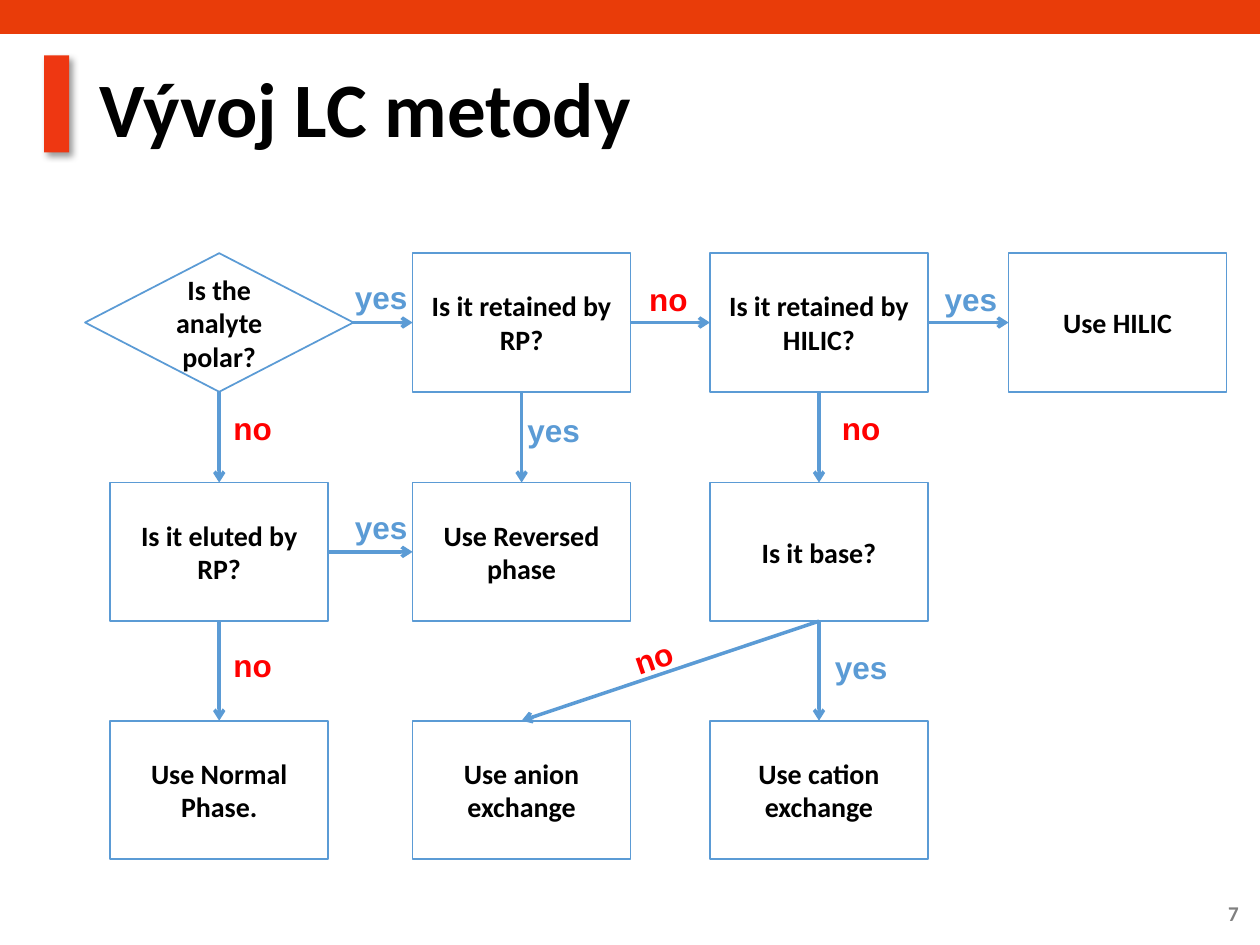
from dataclasses import dataclass

import lxml.etree
import pptx
import pptx.dml.color
import pptx.enum.shapes
import pptx.enum.text
import pptx.oxml
import pptx.oxml.ns
import pptx.util

Inches = pptx.util.Inches
Pt = pptx.util.Pt
Shapes = pptx.enum.shapes.MSO_SHAPE
Align = pptx.enum.text.PP_ALIGN
Anchor = pptx.enum.text.MSO_ANCHOR
qn = pptx.oxml.ns.qn

COLORS = {
    "band": "E93C09",
    "marker": "EE3712",
    "blue": "5B9BD5",
    "red": "FF0000",
    "white": "FFFFFF",
    "black": "000000",
    "gray": "808080",
}
COLUMN_CENTERS = (1.74, 4.14, 6.5, 8.87)
ROW_TOPS = (2.01, 3.83, 5.72)
BOX_WIDTH, BOX_HEIGHT = 1.73, 1.1
DIAMOND_WIDTH = 2.13
LABEL_WIDTH, LABEL_HEIGHT = 0.67, 0.4
TOP, LEFT, BOTTOM, RIGHT = range(4)


@dataclass(frozen=True)
class Step:
    name: str
    text: str
    column: int
    row: int
    decision: bool = False


@dataclass(frozen=True)
class Arrow:
    start: str
    start_side: int
    end: str
    end_side: int
    answer: str
    label_left: float
    label_top: float
    rotation: float = 0


@dataclass(frozen=True)
class TextStyle:
    font: str
    size: float
    color: str
    align: Align = Align.CENTER
    anchor: Anchor = Anchor.MIDDLE
    line_spacing: float = 1.0


STEPS = (
    Step("polar", "Is the analyte polar?", 0, 0, True),
    Step("retained_rp", "Is it retained by RP?", 1, 0),
    Step("retained_hilic", "Is it retained by HILIC?", 2, 0),
    Step("hilic", "Use HILIC", 3, 0),
    Step("eluted_rp", "Is it eluted by RP?", 0, 1),
    Step("reversed", "Use Reversed phase", 1, 1),
    Step("base", "Is it base?", 2, 1),
    Step("normal", "Use Normal Phase.", 0, 2),
    Step("anion", "Use anion exchange", 1, 2),
    Step("cation", "Use cation exchange", 2, 2),
)
ARROWS = (
    Arrow("polar", RIGHT, "retained_rp", LEFT, "yes", 2.69, 2.16),
    Arrow("retained_rp", RIGHT, "retained_hilic", LEFT, "no", 4.97, 2.17),
    Arrow("retained_hilic", RIGHT, "hilic", LEFT, "yes", 7.37, 2.17),
    Arrow("polar", BOTTOM, "eluted_rp", TOP, "no", 1.67, 3.2),
    Arrow("retained_rp", BOTTOM, "reversed", TOP, "yes", 4.06, 3.21),
    Arrow("retained_hilic", BOTTOM, "base", TOP, "no", 6.5, 3.2),
    Arrow("eluted_rp", RIGHT, "reversed", LEFT, "yes", 2.69, 3.98),
    Arrow("eluted_rp", BOTTOM, "normal", TOP, "no", 1.67, 5.08),
    Arrow("base", BOTTOM, "anion", TOP, "no", 4.85, 5.02, 341),
    Arrow("base", BOTTOM, "cation", TOP, "yes", 6.5, 5.09),
)
STEP_STYLE = TextStyle("Calibri", 16, "black")
ANSWER_STYLES = {
    "yes": TextStyle("Arial", 18, "blue", anchor=Anchor.TOP),
    "no": TextStyle("Arial", 18, "red", anchor=Anchor.TOP),
}


def color(name: str) -> pptx.dml.color.RGBColor:
    return pptx.dml.color.RGBColor.from_string(COLORS[name])


def write_text(box, text: str, style: TextStyle) -> None:
    frame = box.text_frame
    frame.word_wrap = True
    frame.vertical_anchor = style.anchor
    para = frame.paragraphs[0]
    para.alignment = style.align
    para.line_spacing = style.line_spacing
    span = para.add_run()
    span.text = text
    span.font.name = style.font
    span.font.size = Pt(style.size)
    span.font.bold = True
    span.font.color.rgb = color(style.color)


def add_text(page, left: float, top: float, width: float, height: float,
             text: str, style: TextStyle):
    box = page.shapes.add_textbox(Inches(left), Inches(top), Inches(width), Inches(height))
    write_text(box, text, style)
    return box


def add_block(page, kind, left: float, top: float, width: float, height: float, fill: str):
    box = page.shapes.add_shape(kind, Inches(left), Inches(top), Inches(width), Inches(height))
    box.shadow.inherit = False
    box.fill.solid()
    box.fill.fore_color.rgb = color(fill)
    box.line.fill.background()
    return box


def add_shadow(box) -> None:
    effects = box._element.spPr.find(qn("a:effectLst"))
    shadow = lxml.etree.SubElement(
        effects, qn("a:outerShdw"), blurRad=str(Pt(4)), dist=str(Pt(3)),
        dir=str(45 * 60000), algn="tl", rotWithShape="0")
    shade = lxml.etree.SubElement(shadow, qn("a:srgbClr"), val=COLORS["black"])
    lxml.etree.SubElement(shade, qn("a:alpha"), val="40000")


def add_step(page, step: Step):
    width = DIAMOND_WIDTH if step.decision else BOX_WIDTH
    kind = Shapes.DIAMOND if step.decision else Shapes.RECTANGLE
    left = COLUMN_CENTERS[step.column] - width / 2
    box = add_block(page, kind, left, ROW_TOPS[step.row], width, BOX_HEIGHT, "white")
    box.line.color.rgb = color("blue")
    box.line.width = Pt(1)
    if step.decision:
        box.text_frame.margin_left = box.text_frame.margin_right = Inches(0.04)
    write_text(box, step.text, STEP_STYLE)
    return box


def add_arrow(page, arrow: Arrow, boxes: dict) -> None:
    line = page.shapes.add_connector(pptx.enum.shapes.MSO_CONNECTOR.STRAIGHT, 0, 0, 0, 0)
    line.begin_connect(boxes[arrow.start], arrow.start_side)
    line.end_connect(boxes[arrow.end], arrow.end_side)
    line.line.color.rgb = color("blue")
    line.line.width = Pt(2)
    lxml.etree.SubElement(line.line._get_or_add_ln(), qn("a:tailEnd"), type="arrow")
    lxml.etree.SubElement(line._element.spPr, qn("a:effectLst"))
    label = add_text(page, arrow.label_left, arrow.label_top, LABEL_WIDTH, LABEL_HEIGHT,
                     arrow.answer, ANSWER_STYLES[arrow.answer])
    label.rotation = arrow.rotation


def main() -> None:
    deck = pptx.Presentation()
    deck.slide_width = Inches(10)
    deck.slide_height = Inches(7.5)
    page = deck.slides.add_slide(deck.slide_layouts[6])

    add_block(page, Shapes.RECTANGLE, 0, 0, 10, 0.27, "band")
    add_shadow(add_block(page, Shapes.RECTANGLE, 0.35, 0.44, 0.2, 0.77, "marker"))
    add_text(page, 0.69, 0.4, 9.05, 0.98, "Vývoj LC metody",
             TextStyle("Calibri", 44, "black", Align.LEFT, line_spacing=0.9))
    add_text(page, 9.25, 7.05, 0.68, 0.4, "7",
             TextStyle("Calibri", 12, "gray", Align.RIGHT))

    boxes = {step.name: add_step(page, step) for step in STEPS}
    for arrow in ARROWS:
        add_arrow(page, arrow, boxes)
    deck.save("out.pptx")


if __name__ == "__main__":
    main()
